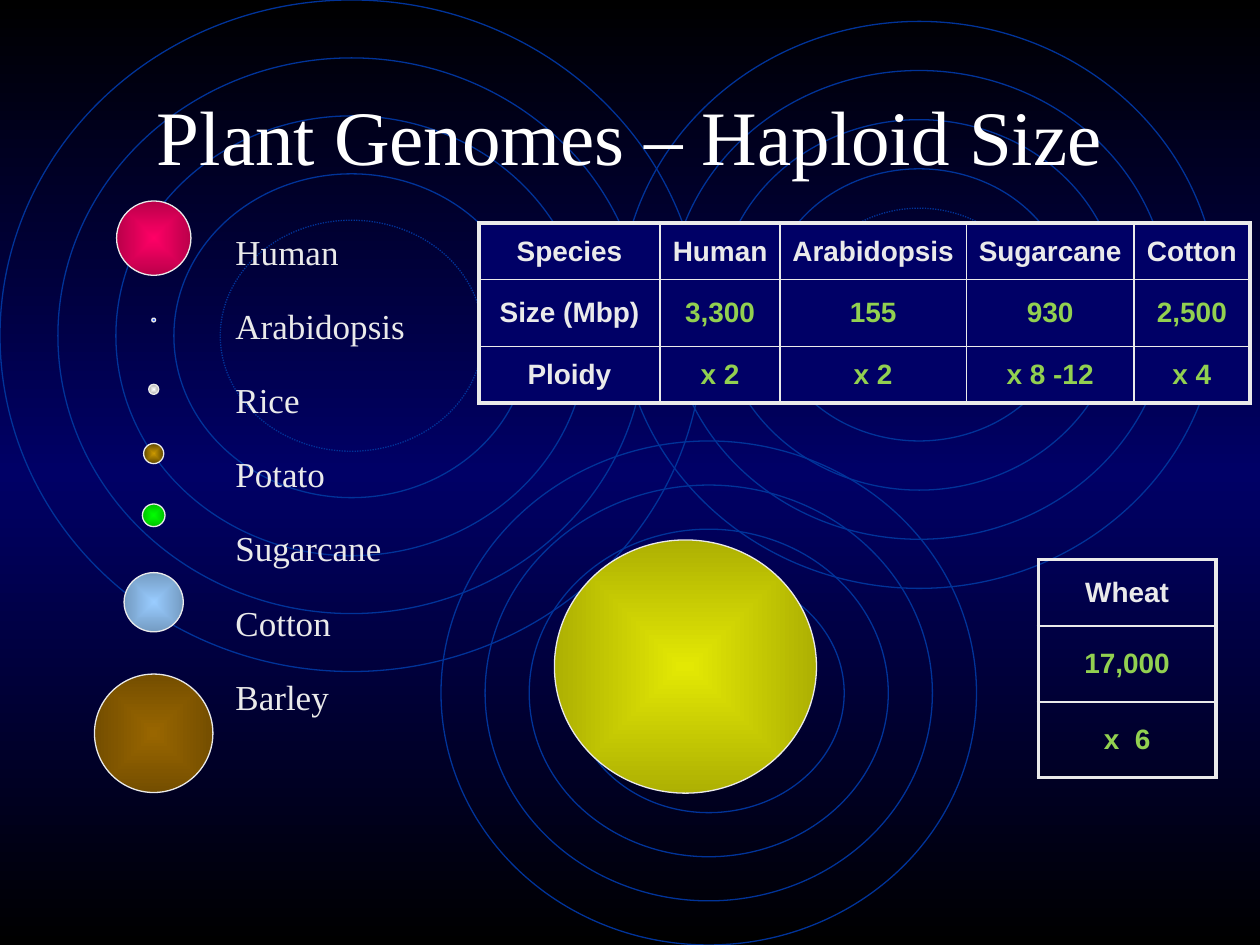
"""Build a slide that compares the haploid genome sizes of plants."""
from dataclasses import dataclass
from typing import Any, Optional

from lxml import etree
from pptx import Presentation
from pptx.dml.color import RGBColor
from pptx.enum.dml import MSO_LINE
from pptx.enum.shapes import MSO_SHAPE
from pptx.enum.text import MSO_ANCHOR, PP_ALIGN
from pptx.oxml.ns import qn
from pptx.util import Inches, Pt

OVAL = MSO_SHAPE.OVAL
DOTS = MSO_LINE.ROUND_DOT
MIDDLE = MSO_ANCHOR.MIDDLE
TOP = MSO_ANCHOR.TOP
LEFT = PP_ALIGN.LEFT
CENTER = PP_ALIGN.CENTER


@dataclass(frozen=True)
class Theme:
    black: str = "000000"
    navy: str = "000066"
    ring: str = "003399"
    white: str = "FFFFFF"
    light: str = "EAEAEA"
    green: str = "92D050"
    serif: str = "Times New Roman"
    sans: str = "Arial"
    title: float = 44
    label: float = 20
    cell: float = 16
    thin: float = 1
    thick: float = 2.25
    edge: float = 0.75


THEME = Theme()


@dataclass(frozen=True)
class Box:
    x: float
    y: float
    w: float
    h: float

    def inset(self, gap: float) -> "Box":
        return Box(self.x + gap, self.y + gap, self.w - 2 * gap, self.h - 2 * gap)

    def spread(self) -> tuple:
        return tuple(Inches(n) for n in (self.x, self.y, self.w, self.h))


@dataclass(frozen=True)
class Ripple:
    box: Box
    step: float


@dataclass(frozen=True)
class Genome:
    mid_x: float
    mid_y: float
    w: float
    h: float
    inner: str
    outer: Optional[str] = None

    def box(self) -> Box:
        return Box(self.mid_x - self.w / 2, self.mid_y - self.h / 2, self.w, self.h)


@dataclass(frozen=True)
class Grid:
    x: float
    y: float
    cols: tuple
    rows: tuple
    cells: tuple
    fill: Optional[str] = None


INSETS = (0, 1, 2, 3, 3.8)
RIPPLES = (
    Ripple(Box(0, 0, 5.58, 5.33), 0.46),
    Ripple(Box(3.5, 3.5, 4.25, 4), 0.35),
    Ripple(Box(4.92, 0.17, 4.75, 4.5), 0.39),
)
AXIS = 1.22
GENOMES = (
    Genome(5.44, 5.29, 2.08, 2.01, "E3E804", "ADB003"),
    Genome(AXIS, 5.82, 0.94, 0.94, "996600", "744E00"),
    Genome(AXIS, 4.78, 0.47, 0.47, "99CCFF", "749BC2"),
    Genome(AXIS, 4.09, 0.18, 0.18, "00FF00", "00C200"),
    Genome(AXIS, 3.6, 0.16, 0.16, "CC9900", "5E4700"),
    Genome(AXIS, 1.89, 0.59, 0.59, "FF0066", "BA004A"),
    Genome(AXIS, 3.09, 0.08, 0.08, "FFFFFF", "AAAAAA"),
    Genome(AXIS, 2.54, 0.03, 0.03, "3366FF"),
)
LABELS = ("Human", "Arabidopsis", "Rice", "Potato", "Sugarcane", "Cotton", "Barley")
WHEAT = Grid(8.24, 4.44, (1.41,), (0.53, 0.6, 0.6), (("Wheat",), ("17,000",), ("x  6",)))
SPECIES = Grid(
    3.8, 1.77, (1.44, 0.95, 1.48, 1.33, 0.92), (0.45, 0.53, 0.45),
    (
        ("Species", "Human", "Arabidopsis", "Sugarcane", "Cotton"),
        ("Size (Mbp)", "3,300", "155", "930", "2,500"),
        ("Ploidy", "x 2", "x 2", "x 8 -12", "x 4"),
    ),
    THEME.navy,
)


def add(parent: Any, tag: str, **attrs: Any) -> Any:
    return etree.SubElement(parent, qn(tag), {k: str(v) for k, v in attrs.items()})


def shade(host: Any, colors: tuple, radial: bool) -> None:
    grad = next(host.iter(qn("a:gradFill")))
    for child in list(grad):
        grad.remove(child)
    stops = add(grad, "a:gsLst")
    for i, color in enumerate(colors):
        stop = add(stops, "a:gs", pos=100000 * i // (len(colors) - 1))
        add(stop, "a:srgbClr", val=color)
    if radial:
        way = add(grad, "a:path", path="shape")
        add(way, "a:fillToRect", l=50000, t=50000, r=50000, b=50000)
    else:
        add(grad, "a:lin", ang=5400000, scaled=1)


def write(frame: Any, *lines: str, font: str, size: float, color: str,
          bold: bool = False, align: Any = LEFT, space: float = 0,
          pitch: float = 1) -> None:
    for i, line in enumerate(lines):
        para = frame.add_paragraph() if i else frame.paragraphs[0]
        para.alignment = align
        para.space_before = Pt(space)
        para.line_spacing = pitch
        run = para.add_run()
        run.text = line
        run.font.name = font
        run.font.size = Pt(size)
        run.font.bold = bold
        run.font.color.rgb = RGBColor.from_string(color)


def frame(slide: Any, box: Box, anchor: Any) -> Any:
    body = slide.shapes.add_textbox(*box.spread()).text_frame
    body.word_wrap = True
    body.vertical_anchor = anchor
    return body


def oval(slide: Any, box: Box, edge: str) -> Any:
    shape = slide.shapes.add_shape(OVAL, *box.spread())
    shape.shadow.inherit = False
    shape.fill.background()
    shape.line.color.rgb = RGBColor.from_string(edge)
    shape.line.width = Pt(THEME.edge)
    return shape


def draw_ripple(slide: Any, ripple: Ripple) -> None:
    for n in INSETS:
        ring = oval(slide, ripple.box.inset(n * ripple.step), THEME.ring)
    ring.line.dash_style = DOTS


def draw_genome(slide: Any, genome: Genome) -> None:
    disc = oval(slide, genome.box(), THEME.light)
    if genome.outer:
        disc.fill.gradient()
        shade(disc._element.spPr, (genome.inner, genome.outer), True)
    else:
        disc.fill.solid()
        disc.fill.fore_color.rgb = RGBColor.from_string(genome.inner)


def draw_grid(slide: Any, grid: Grid) -> None:
    box = Box(grid.x, grid.y, sum(grid.cols), sum(grid.rows))
    high, wide = len(grid.rows), len(grid.cols)
    table = slide.shapes.add_table(high, wide, *box.spread()).table
    table.first_row = table.horz_banding = False
    for col, width in zip(table.columns, grid.cols):
        col.width = Inches(width)
    for r, texts in enumerate(grid.cells):
        table.rows[r].height = Inches(grid.rows[r])
        for c, text in enumerate(texts):
            cell = table.cell(r, c)
            cell.vertical_anchor = MIDDLE
            cell.margin_left = cell.margin_right = Inches(0.08)
            head = r == 0 or (c == 0 and wide > 1)
            write(cell.text_frame, text, font=THEME.sans, size=THEME.cell, bold=True,
                  color=THEME.light if head else THEME.green, align=CENTER, space=3.7)
            rims = {"L": c == 0, "R": c == wide - 1, "T": r == 0, "B": r == high - 1}
            for side, rim in rims.items():
                width = Pt(THEME.thick if rim else THEME.thin)
                line = add(cell._tc.get_or_add_tcPr(), f"a:ln{side}", w=width)
                add(add(line, "a:solidFill"), "a:srgbClr", val=THEME.light)
            if grid.fill:
                cell.fill.solid()
                cell.fill.fore_color.rgb = RGBColor.from_string(grid.fill)
            else:
                cell.fill.background()


def main() -> None:
    deck = Presentation()
    deck.slide_width, deck.slide_height = Inches(10), Inches(7.5)
    slide = deck.slides.add_slide(deck.slide_layouts[6])
    slide.background.fill.gradient()
    shade(slide._element, (THEME.black, THEME.navy, THEME.black), False)
    for ripple in RIPPLES:
        draw_ripple(slide, ripple)
    write(frame(slide, Box(0.75, 0.44, 8.5, 1.25), MIDDLE), "Plant Genomes – Haploid Size",
          font=THEME.serif, size=THEME.title, color=THEME.white, align=CENTER)
    for genome in GENOMES:
        draw_genome(slide, genome)
    draw_grid(slide, WHEAT)
    write(frame(slide, Box(1.77, 1.66, 1.98, 4.29), TOP), *LABELS, font=THEME.serif,
          size=THEME.label, color=THEME.light, space=10, pitch=1.35)
    draw_grid(slide, SPECIES)
    deck.save("out.pptx")


if __name__ == "__main__":
    main()
